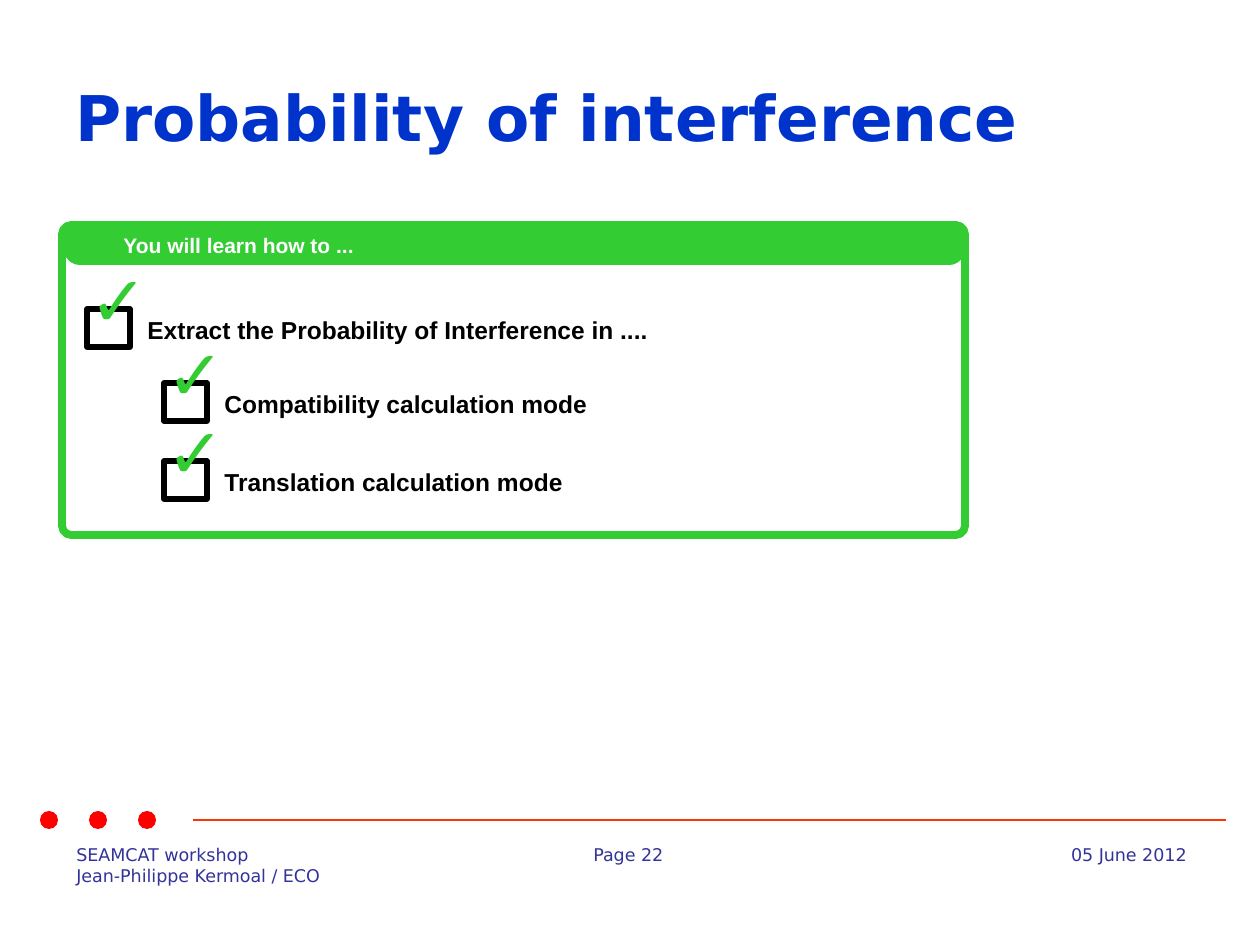
from pptx import Presentation
from pptx.dml.color import RGBColor
from pptx.enum.shapes import MSO_CONNECTOR as CONN, MSO_SHAPE as SHAPE
from pptx.enum.text import MSO_ANCHOR as ANCHOR, PP_ALIGN as ALIGN
from pptx.oxml.ns import qn
from pptx.util import Pt
from lxml import etree

PX = 914400 / 126
GREEN, RED, NAVY = "33CC33", "FF0000", "333399"
SANS = "DejaVu Sans"


def shape(kind, box, fill=None, line=None, width=0, adj=None):
    sp = s.shapes.add_shape(kind, *[round(v * PX) for v in box])
    sp.shadow.inherit = False
    if fill:
        sp.fill.solid()
        sp.fill.fore_color.rgb = RGBColor.from_string(fill)
    else:
        sp.fill.background()
    if line:
        sp.line.color.rgb = RGBColor.from_string(line)
        sp.line.width = Pt(width)
    else:
        sp.line.fill.background()
    if adj is not None:
        sp.adjustments[0] = adj


def text(box, lines, size, color, font="Arial", bold=True, wrap=True,
         align=ALIGN.LEFT, anchor=ANCHOR.TOP):
    tf = s.shapes.add_textbox(*[round(v * PX) for v in box]).text_frame
    tf.word_wrap = wrap
    tf.vertical_anchor = anchor
    for i, line in enumerate(lines):
        p = tf.paragraphs[0] if i == 0 else tf.add_paragraph()
        p.alignment = align
        r = p.add_run()
        r.text = line
        r.font.name = font
        r.font.size = Pt(size)
        r.font.bold = bold
        r.font.color.rgb = RGBColor.from_string(color)


prs = Presentation()
prs.slide_width = round(1260 * PX)
prs.slide_height = round(945 * PX)
s = prs.slides.add_slide(prs.slide_layouts[6])

footers = [
    ((64, 838, 278, 54), ["SEAMCAT workshop", "Jean-Philippe Kermoal / ECO"], False, ALIGN.LEFT),
    ((581, 838, 103, 34), ["Page 22"], False, ALIGN.LEFT),
    ((974, 838, 225, 34), ["05 June 2012"], True, ALIGN.RIGHT),
]
for box, lines, wrap, align in footers:
    text(box, lines, 10, NAVY, SANS, False, wrap, align)

rule = s.shapes.add_connector(CONN.STRAIGHT, *[round(v * PX) for v in (193, 820, 1226, 820)])
rule.line.color.rgb = RGBColor.from_string("FF3300")
rule.line.width = Pt(0.75)
etree.SubElement(rule._element.spPr, qn("a:effectLst"))

for i in range(3):
    shape(SHAPE.OVAL, (40 + 49 * i, 811, 18, 18), RED)

text((63, 38, 1134, 157), ["Probability of interference"], 36, "0033CC", SANS, anchor=ANCHOR.MIDDLE)

shape(SHAPE.ROUNDED_RECTANGLE, (62, 225, 903, 310), line=GREEN, width=4.5, adj=0.03)
shape(SHAPE.ROUNDED_RECTANGLE, (64, 222, 901, 43), GREEN, adj=0.37)
text((111, 226, 625, 38), ["You will learn how to ..."], 12, "FFFFFF")

items = [
    (135, 309, "Extract the Probability of Interference in ...."),
    (212, 383, "Compatibility calculation mode"),
    (212, 461, "Translation calculation mode"),
]
for x, y, label in items:
    text((x, y, 664, 42), [label], 14, "000000")
    shape(SHAPE.RECTANGLE, (x - 48, y, 43, 38), line="000000", width=3)
    text((x - 58, y - 59, 78, 97), ["✓"], 40, GREEN, wrap=False)

prs.save("out.pptx")
